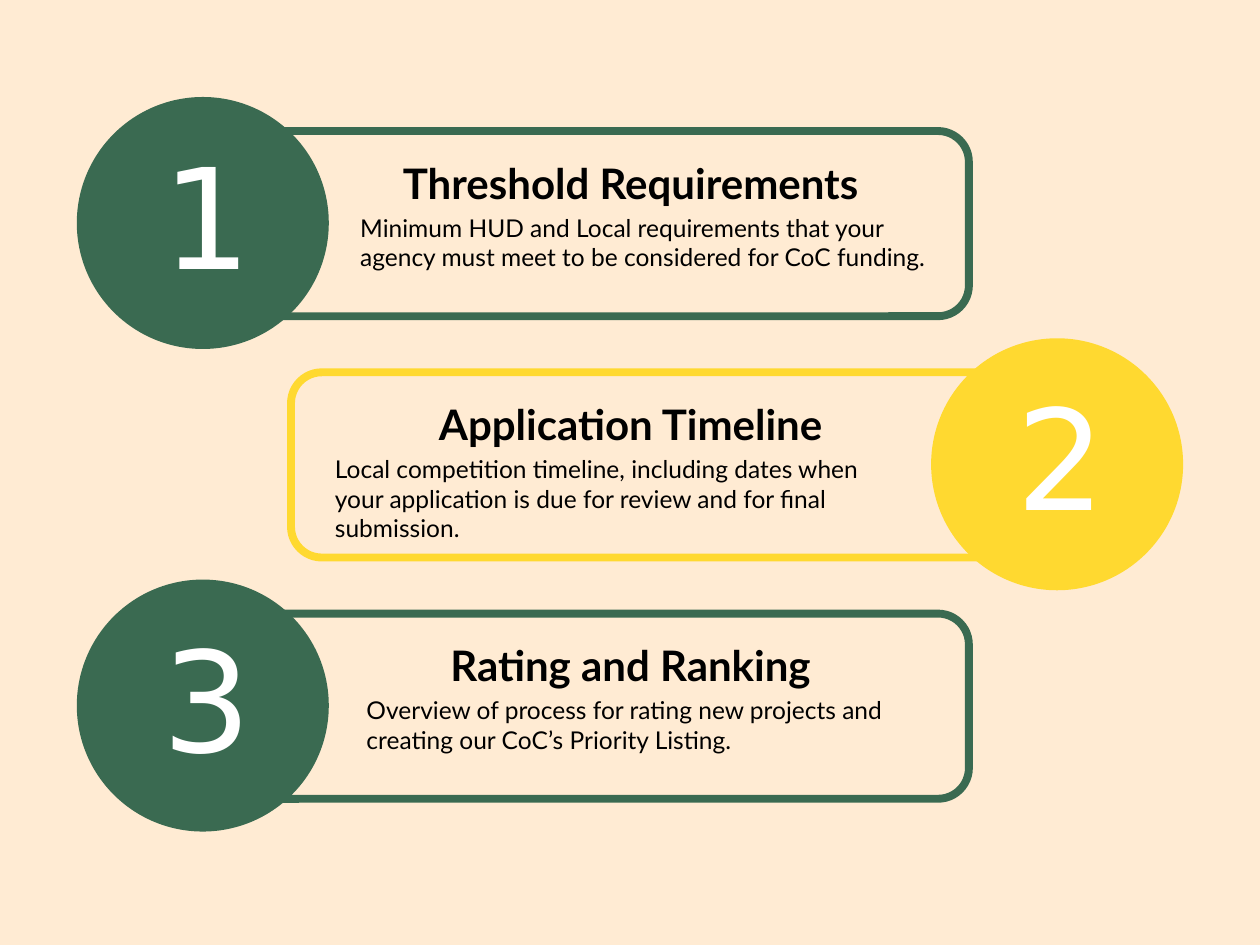
"""Build a slide with three numbered steps on alternating sides."""
from dataclasses import dataclass

from pptx import Presentation
from pptx.dml.color import RGBColor
from pptx.enum.shapes import MSO_SHAPE
from pptx.enum.text import MSO_AUTO_SIZE, PP_ALIGN
from pptx.util import Inches, Pt

FRAME, CIRCLE = MSO_SHAPE.ROUNDED_RECTANGLE, MSO_SHAPE.OVAL
LEFT, CENTER = PP_ALIGN.LEFT, PP_ALIGN.CENTER
GROW = MSO_AUTO_SIZE.SHAPE_TO_FIT_TEXT


@dataclass(frozen=True)
class Theme:
    background: RGBColor = RGBColor.from_string("FFEBD3")
    green: RGBColor = RGBColor.from_string("3A6A51")
    yellow: RGBColor = RGBColor.from_string("FFD930")
    ink: RGBColor = RGBColor.from_string("000000")
    white: RGBColor = RGBColor.from_string("FFFFFF")
    text_font: str = "Lato"
    number_font: str = "DejaVu Sans"
    number_size: int = 80
    title_size: int = 24
    body_size: int = 14
    outline: float = 4.5


theme = Theme()
FIRST_ROW, ROW_PITCH = 0.77, 1.915
LEFT_COLUMNS = {"circle": 0.61, "frame": 1.69}
RIGHT_COLUMNS = {"circle": 7.39, "frame": 2.31}
TITLE_COLUMN = 2.81

STEPS = [
    ("Threshold Requirements",
     "Minimum HUD and Local requirements that your agency must meet to be considered for CoC funding.",
     LEFT_COLUMNS, 2.76, theme.green),
    ("Application Timeline",
     "Local competition timeline, including dates when your application is due for review "
     "and for final submission.",
     RIGHT_COLUMNS, 2.56, theme.yellow),
    ("Rating and Ranking",
     "Overview of process for rating new projects and creating our CoC’s Priority Listing.",
     LEFT_COLUMNS, 2.81, theme.green),
]

deck = Presentation()
deck.slide_width, deck.slide_height = Inches(10), Inches(7.5)
page = deck.slides.add_slide(deck.slide_layouts[6])
page.background.fill.solid()
page.background.fill.fore_color.rgb = theme.background


def add_outline(kind, left, top, width, height, color, filled):
    shape = page.shapes.add_shape(kind, *map(Inches, (left, top, width, height)))
    shape.shadow.inherit = False
    if filled:
        shape.fill.solid()
        shape.fill.fore_color.rgb = color
        shape.line.fill.background()
    else:
        shape.fill.background()
        shape.line.color.rgb = color
        shape.line.width = Pt(theme.outline)


def add_text(text, left, top, width, height, font, size, color, align=LEFT, bold=False):
    box = page.shapes.add_textbox(*map(Inches, (left, top, width, height)))
    box.text_frame.word_wrap = True
    box.text_frame.auto_size = GROW
    para = box.text_frame.paragraphs[0]
    para.text = text
    para.alignment = align
    para.font.name, para.font.size = font, Pt(size)
    para.font.bold, para.font.color.rgb = bold, color


for row, (title, body, columns, body_column, color) in enumerate(STEPS):
    top = FIRST_ROW + row * ROW_PITCH
    add_outline(FRAME, columns["frame"], top + 0.27, 6, 1.47, color, filled=False)
    add_outline(CIRCLE, columns["circle"], top, 2, 2, color, filled=True)
    add_text(str(row + 1), columns["circle"] + 0.58, top + 0.21, 1, 1.45,
             theme.number_font, theme.number_size, theme.white)
    add_text(title, TITLE_COLUMN, top + 0.43, 4.39, 0.5,
             theme.text_font, theme.title_size, theme.ink, CENTER, bold=True)
    add_text(body, body_column, top + 0.87, 4.75, 0.57,
             theme.text_font, theme.body_size, theme.ink)

deck.save("out.pptx")
